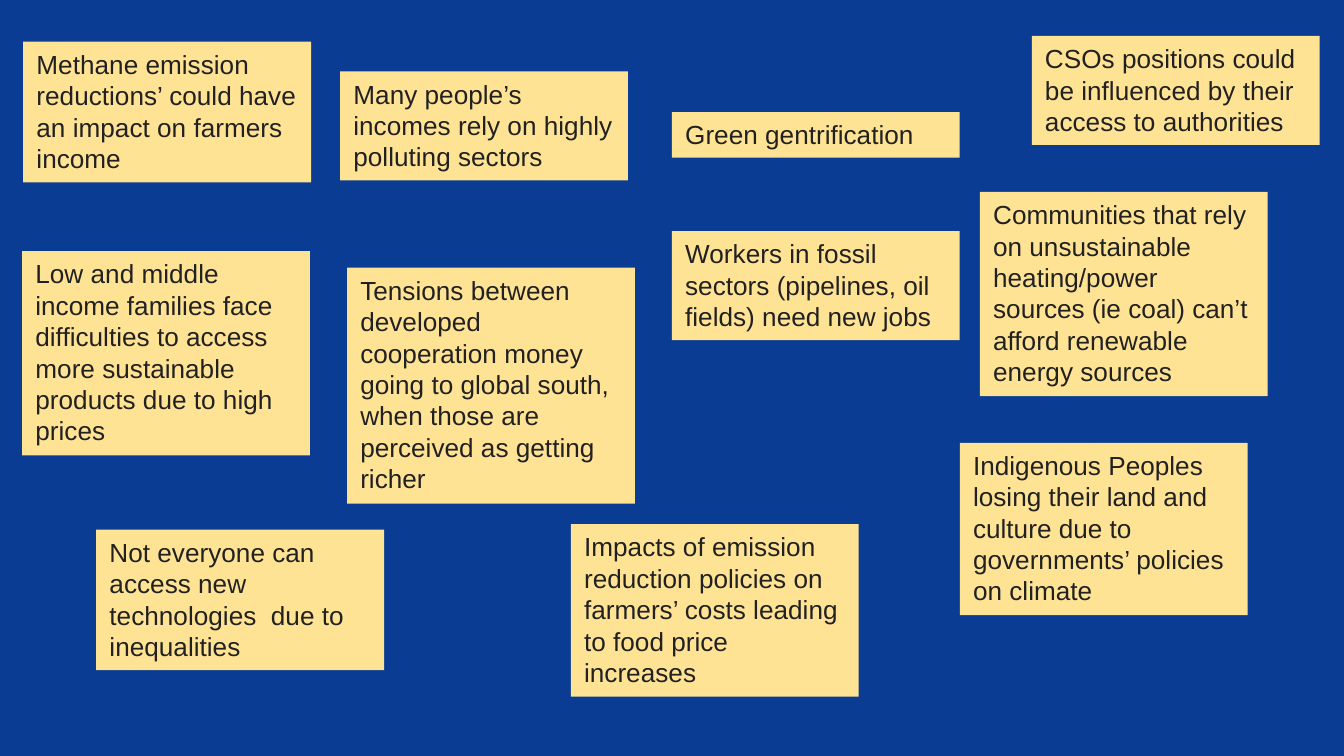
"""Build a slide of sticky notes about the social tensions of climate policy."""
from pptx import Presentation
from pptx.dml.color import RGBColor
from pptx.enum.shapes import MSO_SHAPE
from pptx.enum.text import MSO_ANCHOR, MSO_AUTO_SIZE, PP_ALIGN
from pptx.util import Cm, Pt

RECTANGLE = MSO_SHAPE.RECTANGLE
TOP = MSO_ANCHOR.TOP
GROW = MSO_AUTO_SIZE.SHAPE_TO_FIT_TEXT
LEFT = PP_ALIGN.LEFT

NOTE_WIDTH = 5.44
LINE_HEIGHT = 0.6
NOTE_PADDING = 0.26


def paint(fill, color):
    fill.solid()
    fill.fore_color.rgb = RGBColor.from_string(color)


concerns = [
    (0.44, 0.79, 4, "Methane emission reductions’ could have an impact on farmers income"),
    (6.43, 1.35, 3, "Many people’s incomes rely on highly polluting sectors"),
    (6.56, 5.06, 7, "Tensions between developed cooperation money going to global south, "
                    "when those are perceived as getting richer"),
    (0.42, 4.75, 6, "Low and middle income families face difficulties to access "
                    "more sustainable products due to high prices"),
    (12.7, 4.37, 3, "Workers in fossil sectors (pipelines, oil fields) need new jobs"),
    (18.52, 3.63, 6, "Communities that rely on unsustainable heating/power sources "
                     "(ie coal) can’t afford renewable energy sources"),
    (10.79, 9.91, 5, "Impacts of emission reduction policies on farmers’ costs "
                     "leading to food price increases"),
    (1.82, 10.01, 4, "Not everyone can access new technologies  due to inequalities"),
    (18.14, 8.37, 5, "Indigenous Peoples losing their land and culture due to "
                     "governments’ policies on climate"),
    (12.7, 2.12, 1, "Green gentrification"),
    (19.5, 0.68, 3, "CSOs positions could be influenced by their access to authorities"),
]

deck = Presentation()
deck.slide_width = Cm(25.4)
deck.slide_height = Cm(14.29)
board = deck.slides.add_slide(deck.slide_layouts[6])
paint(board.background.fill, "093C92")

for left, top, lines, concern in concerns:
    height = NOTE_PADDING + LINE_HEIGHT * lines
    note = board.shapes.add_shape(RECTANGLE, Cm(left), Cm(top), Cm(NOTE_WIDTH), Cm(height))
    note.shadow.inherit = False
    paint(note.fill, "FFE395")
    note.line.fill.background()

    frame = note.text_frame
    frame.word_wrap = True
    frame.auto_size = GROW
    frame.vertical_anchor = TOP
    paragraph = frame.paragraphs[0]
    paragraph.alignment = LEFT
    wording = paragraph.add_run()
    wording.text = concern
    wording.font.name = "Arial"
    wording.font.size = Pt(14)
    paint(wording.font.fill, "212121")

deck.save("out.pptx")
